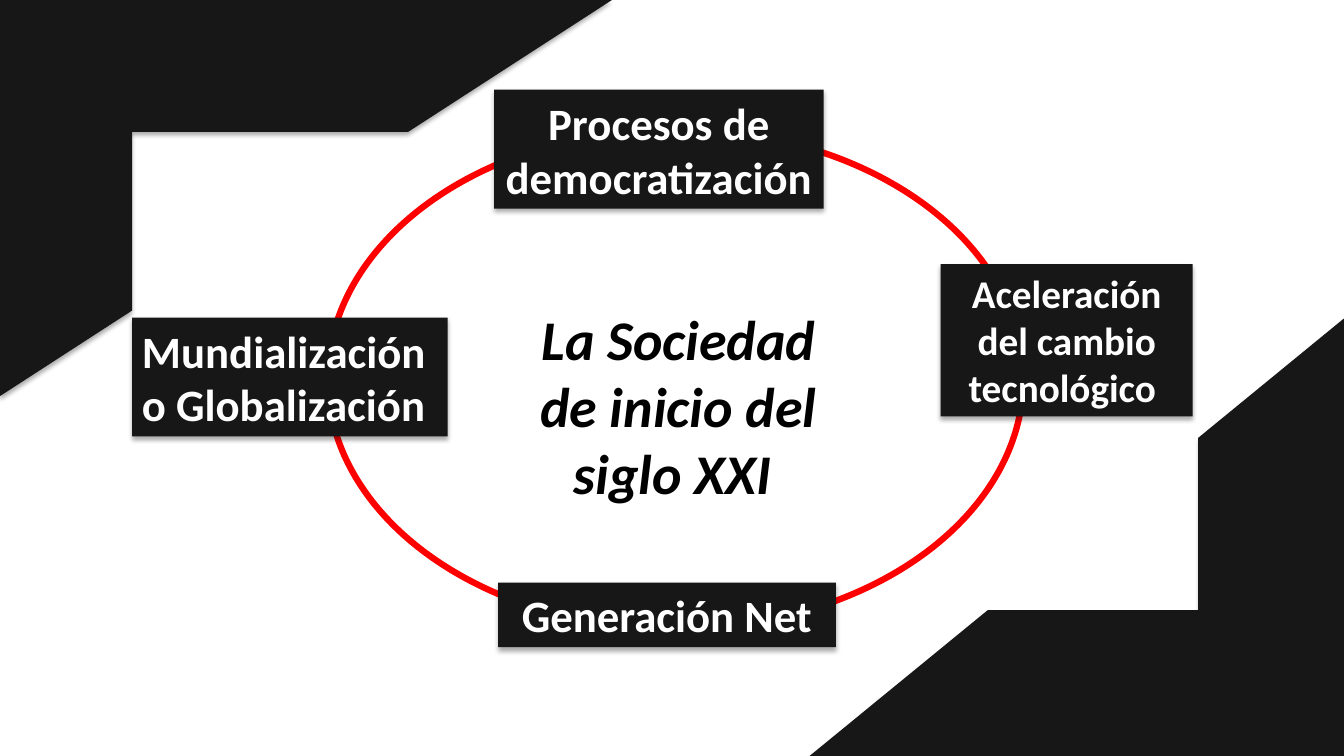
from dataclasses import dataclass

from lxml.etree import SubElement
from pptx import Presentation
from pptx.dml.color import RGBColor
from pptx.enum.shapes import MSO_SHAPE as Preset
from pptx.enum.text import MSO_ANCHOR as Anchor, MSO_AUTO_SIZE as AutoSize, PP_ALIGN as Align
from pptx.oxml.ns import qn
from pptx.util import Inches, Pt


@dataclass(frozen=True)
class Theme:
    font: str = "Calibri"
    dark: RGBColor = RGBColor(0x18, 0x17, 0x17)
    white: RGBColor = RGBColor(0xFF, 0xFF, 0xFF)
    black: RGBColor = RGBColor(0, 0, 0)
    red: RGBColor = RGBColor(0xFF, 0, 0)
    title_size: int = 40
    label_size: int = 32
    small_label_size: int = 28


THEME = Theme()


def write_text(shape, text, size=THEME.label_size, color=THEME.white,
               align=Align.CENTER, italic=False):
    frame = shape.text_frame
    frame.word_wrap = True
    frame.auto_size = AutoSize.SHAPE_TO_FIT_TEXT
    frame.vertical_anchor = Anchor.MIDDLE
    paragraph = frame.paragraphs[0]
    paragraph.alignment = align
    run = paragraph.add_run()
    run.text = text
    font = run.font
    font.name, font.size, font.bold, font.italic = THEME.font, Pt(size), True, italic
    font.color.rgb = color


def place(shape, box):
    shape.left, shape.top, shape.width, shape.height = map(Inches, box)


def add_shadow(shape):
    effects = shape.element.spPr.find(qn("a:effectLst"))
    shadow = SubElement(effects, qn("a:outerShdw"), blurRad=str(Pt(3.5)),
                        dist=str(Pt(2.2)), dir="5400000", rotWithShape="0")
    color = SubElement(shadow, qn("a:srgbClr"), val=str(THEME.black))
    SubElement(color, qn("a:alpha"), val="32000")


def add_figure(slide, preset, box, fill):
    figure = slide.shapes.add_shape(preset, *map(Inches, box))
    figure.shadow.inherit = False
    figure.fill.solid()
    figure.fill.fore_color.rgb = fill
    figure.line.fill.background()
    return figure


def add_dark_figure(slide, preset, box):
    figure = add_figure(slide, preset, box, THEME.dark)
    add_shadow(figure)
    return figure


def add_label(slide, text, box, **text_format):
    write_text(add_dark_figure(slide, Preset.RECTANGLE, box), text, **text_format)


def add_ring(slide, box):
    ring = add_figure(slide, Preset.OVAL, box, THEME.white)
    ring.line.color.rgb = THEME.red
    ring.line.width = Pt(4.5)
    return ring


def main():
    deck = Presentation()
    deck.slide_width, deck.slide_height = Inches(13.33), Inches(7.5)
    slide = deck.slides.add_slide(deck.slide_layouts[5])

    # Ring with the central title in front of it
    ring = add_ring(slide, (3.25, 1.28, 6.9, 4.96))
    title = slide.shapes.title
    place(title, (4.93, 2.96, 3.6, 2.12))
    write_text(title, "La Sociedad de inicio del siglo XXI ",
               size=THEME.title_size, color=THEME.black, italic=True)
    ring.element.addnext(title.element)

    # Labels around the ring
    add_label(slide, "Mundialización o Globalización", (1.31, 3.15, 3.13, 1.18),
              align=Align.LEFT)
    add_label(slide, "Procesos de democratización", (4.9, 0.89, 3.27, 1.18))
    add_label(slide, "Aceleración del cambio tecnológico ", (9.33, 2.62, 2.5, 1.51),
              size=THEME.small_label_size)
    add_label(slide, "Generación Net", (4.94, 5.78, 3.35, 0.64))

    # Corner frames: top left, and bottom right by mirroring and turning
    add_dark_figure(slide, Preset.HALF_FRAME, (0, 0, 6.07, 3.93))
    lower_frame = add_dark_figure(slide, Preset.HALF_FRAME, (8.51, 2.68, 4.34, 5.3))
    lower_frame.rotation = 90
    lower_frame.element.spPr.find(qn("a:xfrm")).set("flipH", "1")

    deck.save("out.pptx")


if __name__ == "__main__":
    main()
